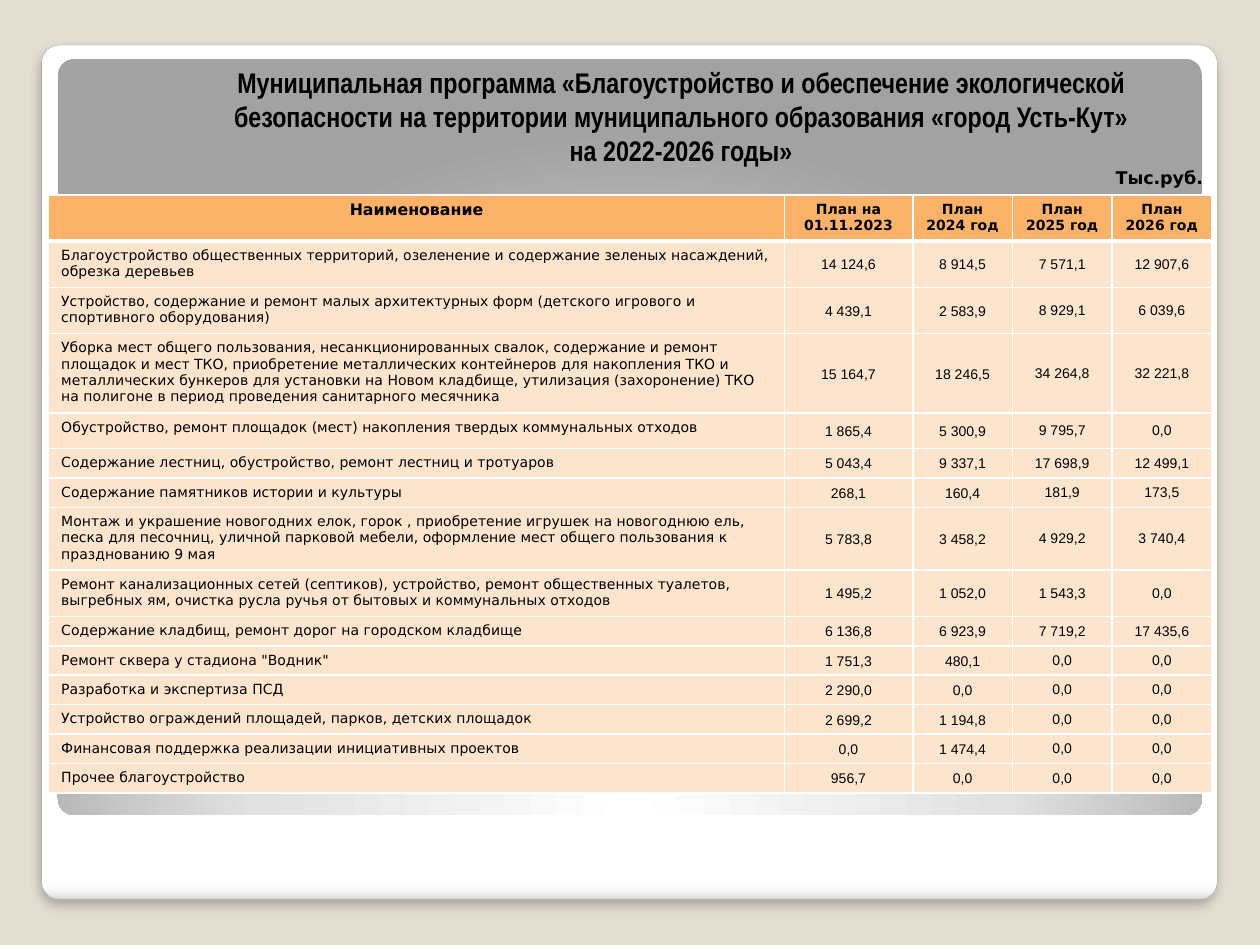
from lxml import etree
from pptx import Presentation
from pptx.dml.color import RGBColor
from pptx.enum.shapes import MSO_SHAPE as Shape
from pptx.enum.text import MSO_ANCHOR as Anchor, PP_ALIGN as Align
from pptx.oxml.ns import qn
from pptx.util import Cm, Pt

BACKGROUND = RGBColor(0xE3, 0xDE, 0xD1)
WHITE = RGBColor(0xFF, 0xFF, 0xFF)
NEAR_WHITE = RGBColor(0xF7, 0xF7, 0xF7)
EDGE_GRAY = RGBColor(0xDA, 0xDA, 0xDA)
LIGHT_GRAY = RGBColor(0xE1, 0xE1, 0xE1)
MID_GRAY = RGBColor(0xA2, 0xA2, 0xA2)
OUTLINE_GRAY = RGBColor(0xA4, 0xA4, 0xA4)
BLACK = RGBColor(0, 0, 0)
HEADER_ORANGE = RGBColor(0xF9, 0xB2, 0x68)
BODY_PEACH = RGBColor(0xFD, 0xE5, 0xCD)

TITLE = ("Муниципальная программа «Благоустройство и обеспечение экологической "
         "безопасности на территории муниципального образования «город Усть-Кут»\v"
         "на 2022-2026 годы»")
HEADINGS = ("Наименование", "План на 01.11.2023", "План 2024 год",
            "План 2025 год", "План 2026 год")
# Row height in cm, name, four plan values
PLAN_ROWS = [
    (0.92, "Благоустройство общественных территорий, озеленение и содержание зеленых "
           "насаждений, обрезка деревьев", "14 124,6", "8 914,5", "7 571,1", "12 907,6"),
    (0.92, "Устройство, содержание и ремонт малых архитектурных форм (детского игрового и "
           "спортивного оборудования)", "4 439,1", "2 583,9", "8 929,1", "6 039,6"),
    (1.56, "Уборка мест общего пользования, несанкционированных свалок, содержание и ремонт "
           "площадок и мест ТКО, приобретение металлических контейнеров для накопления ТКО и "
           "металлических бункеров для установки на Новом кладбище, утилизация (захоронение) "
           "ТКО на полигоне в период проведения санитарного месячника",
     "15 164,7", "18 246,5", "34 264,8", "32 221,8"),
    (0.71, "Обустройство, ремонт площадок (мест) накопления твердых коммунальных отходов",
     "1 865,4", "5 300,9", "9 795,7", "0,0"),
    (0.59, "Содержание лестниц, обустройство, ремонт лестниц и тротуаров",
     "5 043,4", "9 337,1", "17 698,9", "12 499,1"),
    (0.59, "Содержание памятников истории и культуры", "268,1", "160,4", "181,9", "173,5"),
    (1.25, "Монтаж и украшение новогодних елок, горок , приобретение игрушек на новогоднюю "
           "ель, песка для песочниц, уличной парковой мебели, оформление мест общего "
           "пользования к празднованию 9 мая", "5 783,8", "3 458,2", "4 929,2", "3 740,4"),
    (0.92, "Ремонт канализационных сетей (септиков), устройство, ремонт общественных "
           "туалетов, выгребных ям, очистка русла ручья от бытовых и коммунальных отходов",
     "1 495,2", "1 052,0", "1 543,3", "0,0"),
    (0.59, "Содержание кладбищ, ремонт дорог на городском кладбище",
     "6 136,8", "6 923,9", "7 719,2", "17 435,6"),
    (0.59, 'Ремонт сквера у стадиона "Водник"', "1 751,3", "480,1", "0,0", "0,0"),
    (0.59, "Разработка и экспертиза ПСД", "2 290,0", "0,0", "0,0", "0,0"),
    (0.59, "Устройство ограждений площадей, парков, детских площадок",
     "2 699,2", "1 194,8", "0,0", "0,0"),
    (0.59, "Финансовая поддержка реализации инициативных проектов",
     "0,0", "1 474,4", "0,0", "0,0"),
    (0.59, "Прочее благоустройство", "956,7", "0,0", "0,0", "0,0"),
]
HEADER_HEIGHT = 0.92
COLUMN_WIDTHS = (14.83, 2.59, 2.01, 2.01, 2.01)

HEADER_FONT = {"name": "DejaVu Sans", "size": Pt(8), "bold": True}
NAME_FONT = {"name": "DejaVu Sans", "size": Pt(8), "bold": False}
VALUE_FONT = {"name": "Arial", "size": Pt(8), "bold": False}
TIGHT_MARGINS = {"margin_left": Cm(0.03), "margin_right": Cm(0.03),
                 "margin_top": Cm(0.03), "margin_bottom": 0}


def add_node(parent, tag, **attributes):
    node = etree.SubElement(parent, qn(tag))
    for name, value in attributes.items():
        node.set(name, str(value))
    return node


def set_all(target, values):
    for name, value in values.items():
        setattr(target, name, value)


def write(frame, text, align, font):
    para = frame.paragraphs[0]
    para.text = text
    para.alignment = align
    for span in para.runs:
        set_all(span.font, font)
        span.font.color.rgb = BLACK


def set_gradient(shape, stops):
    """Replace the fill by the given stops and return the gradient node."""
    shape.fill.gradient()
    gradient = shape._element.spPr.find(qn("a:gradFill"))
    for child in list(gradient):
        gradient.remove(child)
    stop_list = add_node(gradient, "a:gsLst")
    for percent, color in stops:
        stop = add_node(stop_list, "a:gs", pos=percent * 1000)
        add_node(stop, "a:srgbClr", val=color)
    return gradient


def add_panel(page, box):
    panel = page.shapes.add_shape(Shape.ROUNDED_RECTANGLE, *map(Cm, box))
    panel.adjustments[0] = 0.021
    panel.shadow.inherit = False
    return panel


def add_frame(page, box):
    """White card with a soft shadow and a gray panel inside it."""
    left, top, width, height = box
    card = add_panel(page, box)
    gradient = set_gradient(card, [(0, WHITE), (98, WHITE), (99, NEAR_WHITE), (100, EDGE_GRAY)])
    add_node(gradient, "a:lin", ang=90 * 60000, scaled=0)
    card.line.color.rgb = OUTLINE_GRAY
    card.line.width = Pt(0.16)
    effects = card._element.spPr.find(qn("a:effectLst"))
    shadow = add_node(effects, "a:outerShdw", blurRad=Pt(6), dist=Pt(4),
                      dir=90 * 60000, algn="t", rotWithShape=0)
    add_node(add_node(shadow, "a:srgbClr", val=BLACK), "a:alpha", val=25000)

    panel = add_panel(page, (left + 0.33, top + 0.28, width - 0.64, 15.24))
    gradient = set_gradient(panel, [(0, WHITE), (55, LIGHT_GRAY), (100, MID_GRAY)])
    focus = add_node(gradient, "a:path", path="circle")
    add_node(focus, "a:fillToRect", l=50000, t=175000, r=50000, b=-75000)
    panel.line.fill.background()


def add_label(page, box, text, anchor, font):
    frame = page.shapes.add_textbox(*map(Cm, box)).text_frame
    set_all(frame, {"word_wrap": True, "vertical_anchor": anchor, "margin_top": 0})
    write(frame, text, Align.CENTER, font)


def set_borders(cell, bottom):
    properties = cell._tc.get_or_add_tcPr()
    for side, width in {"L": 1, "R": 1, "T": 1, "B": bottom}.items():
        line = add_node(properties, f"a:ln{side}", w=Pt(width))
        add_node(add_node(line, "a:solidFill"), "a:srgbClr", val=WHITE)


def fill_cell(cell, text, color, align, font, border=1):
    set_borders(cell, border)
    cell.fill.solid()
    cell.fill.fore_color.rgb = color
    write(cell.text_frame, text, align, font)


def add_plan_table(page, left, top):
    heights = [HEADER_HEIGHT] + [row[0] for row in PLAN_ROWS]
    table = page.shapes.add_table(len(heights), len(COLUMN_WIDTHS), Cm(left), Cm(top),
                                  Cm(sum(COLUMN_WIDTHS)), Cm(sum(heights))).table
    table.horz_banding = False
    for column, width in zip(table.columns, COLUMN_WIDTHS):
        column.width = Cm(width)
    for row, height in zip(table.rows, heights):
        row.height = Cm(height)

    for index, heading in enumerate(HEADINGS):
        size = Pt(8) if index else Pt(9)
        fill_cell(table.cell(0, index), heading, HEADER_ORANGE, Align.CENTER,
                  HEADER_FONT | {"size": size}, border=3)
    for row, (_, name, *values) in enumerate(PLAN_ROWS, 1):
        fill_cell(table.cell(row, 0), name, BODY_PEACH, Align.LEFT, NAME_FONT)
        for column, value in enumerate(values, 1):
            cell = table.cell(row, column)
            fill_cell(cell, value, BODY_PEACH, Align.CENTER, VALUE_FONT)
            cell.vertical_anchor = Anchor.MIDDLE
            if column <= 2:
                set_all(cell, TIGHT_MARGINS)


def main():
    deck = Presentation()
    deck.slide_width, deck.slide_height = Cm(25.4), Cm(19.05)
    page = deck.slides.add_slide(deck.slide_layouts[6])
    page.background.fill.solid()
    page.background.fill.fore_color.rgb = BACKGROUND

    add_frame(page, (0.84, 0.91, 23.7, 17.22))
    add_label(page, (3.81, 1.24, 19.84, 2.26), TITLE, Anchor.BOTTOM,
              {"name": "Arial Narrow", "size": Pt(16.2), "bold": True})
    add_plan_table(page, 0.98, 3.93)
    add_label(page, (22.1, 3.39, 2.54, 0.5), "Тыс.руб.", Anchor.MIDDLE,
              {"name": "DejaVu Sans", "size": Pt(10), "bold": True})
    deck.save("out.pptx")


if __name__ == "__main__":
    main()
